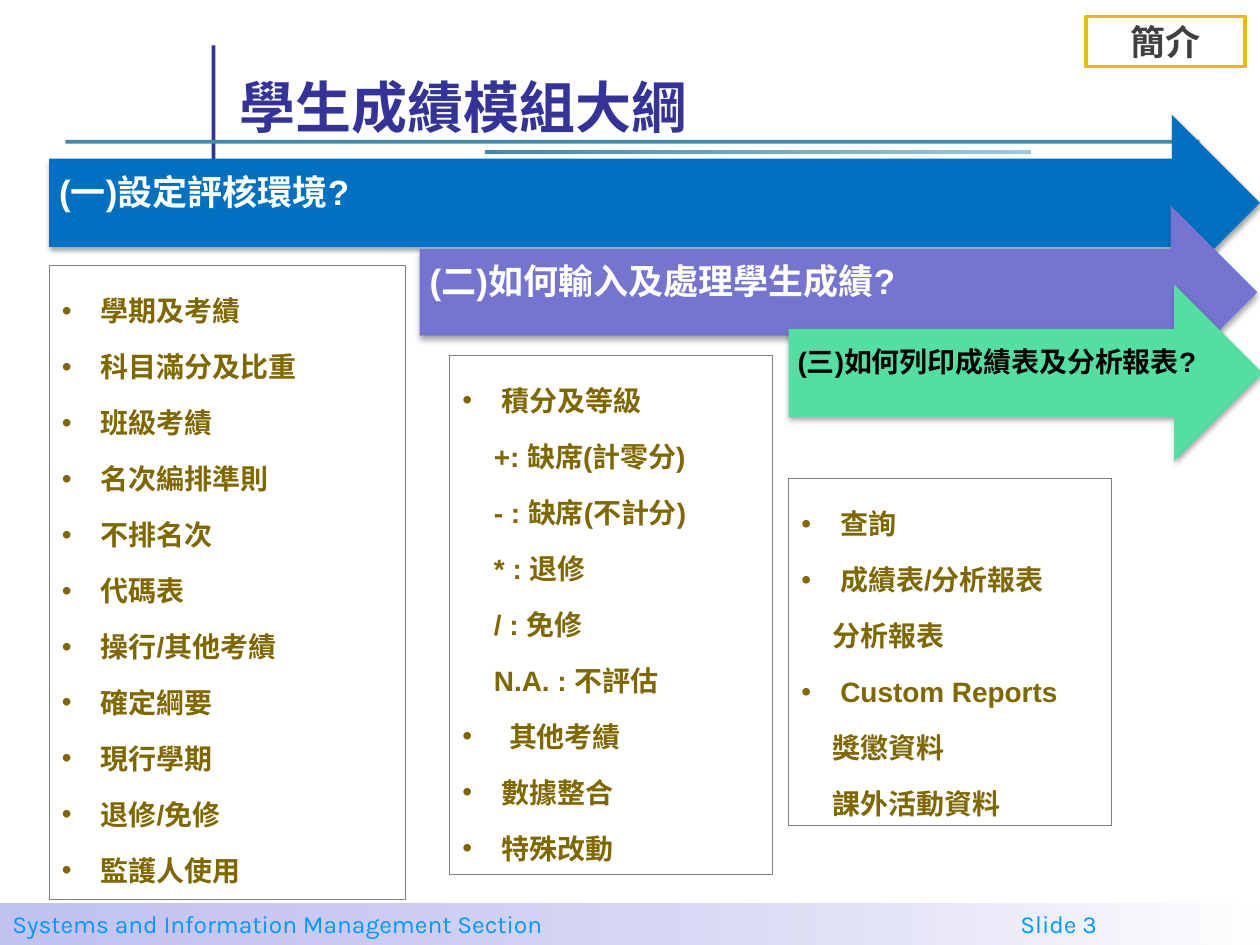
from lxml.etree import SubElement
from pptx import Presentation
from pptx.dml.color import RGBColor
from pptx.enum.shapes import MSO_SHAPE as Shape
from pptx.enum.text import MSO_ANCHOR as Anchor, MSO_AUTO_SIZE as AutoSize, PP_ALIGN as Align
from pptx.oxml.ns import qn
from pptx.util import Inches, Pt

COLORS = {
    "navy": "333399", "teal": "3F8DA5", "mist": "9BCAD9", "indigo": "3333CC",
    "sky": "0099FF", "blue": "0070C0", "violet": "7575D1", "green": "54DFA2",
    "gold": "E7BB01", "olive": "806800", "gray": "808080", "dark": "404040",
    "white": "FFFFFF", "black": "000000",
}

BULLET = {"indent": 0.31, "bullet": True}
DEEP_BULLET = {"indent": 0.37, "bullet": True}
PLAIN = {"indent": 0.25, "bullet": False}

SETUP_ITEMS = [(topic, BULLET) for topic in (
    "學期及考績", "科目滿分及比重", "班級考績", "名次編排準則", "不排名次", "代碼表",
    "操行/其他考績", "確定綱要", "現行學期", "退修/免修", "監護人使用")]
SCORE_ITEMS = [
    ("積分及等級", BULLET), ("+: 缺席(計零分)", PLAIN), ("- : 缺席(不計分)", PLAIN),
    ("* : 退修", PLAIN), ("/ : 免修", PLAIN), ("N.A. : 不評估", PLAIN),
    ("其他考績", DEEP_BULLET), ("數據整合", BULLET), ("特殊改動", BULLET),
]
REPORT_ITEMS = [
    ("查詢", BULLET), ("成績表/分析報表", BULLET), ("分析報表", PLAIN),
    ("Custom Reports", BULLET), ("獎懲資料", PLAIN), ("課外活動資料", PLAIN),
]


def rgb(name):
    return RGBColor.from_string(COLORS[name])


def write(paragraph, text, size=16, color="olive", font="Arial", bold=True,
          align=Align.LEFT, spacing=1.0, before=0, indent=None, bullet=False, tab=None):
    paragraph.alignment = align
    paragraph.line_spacing = spacing
    paragraph.space_before = Pt(before)
    props = paragraph._p.get_or_add_pPr()
    if indent is not None:
        props.set("marL", str(Inches(indent)))
        props.set("indent", str(-Inches(indent) if bullet else 0))
        if bullet:
            SubElement(props, qn("a:buFont"), typeface="Arial")
            SubElement(props, qn("a:buChar"), char="•")
        else:
            SubElement(props, qn("a:buNone"))
    if tab is not None:
        stops = SubElement(props, qn("a:tabLst"))
        SubElement(stops, qn("a:tab"), pos=str(Inches(tab)), algn="l")
    paragraph.font.size = Pt(size)
    run = paragraph.add_run()
    run.text = text
    run.font.size, run.font.name, run.font.bold = Pt(size), font, bold
    run.font.color.rgb = rgb(color)


class OutlineSlide:
    def __init__(self, deck):
        self.slide = deck.slides.add_slide(deck.slide_layouts[4])
        self.bodies = [holder for holder in self.slide.placeholders
                       if holder.placeholder_format.idx > 0]

    def place(self, holder, box):
        holder.left, holder.top, holder.width, holder.height = map(Inches, box)

    def frame(self, shape, anchor, insets=(0.1, 0.05, 0.1, 0.05)):
        frame = shape.text_frame
        frame.word_wrap = True
        frame.auto_size = AutoSize.NONE
        frame.vertical_anchor = anchor
        (frame.margin_left, frame.margin_top,
         frame.margin_right, frame.margin_bottom) = map(Inches, insets)
        return frame

    def title(self, text, box):
        holder = self.slide.shapes.title
        self.place(holder, box)
        write(self.frame(holder, Anchor.BOTTOM).paragraphs[0], text, size=32, color="navy")

    def block(self, box, fill, kind=Shape.RECTANGLE):
        block = self.slide.shapes.add_shape(kind, *map(Inches, box))
        block.shadow.inherit = False
        block.line.fill.background()
        block.fill.solid()
        block.fill.fore_color.rgb = rgb(fill)
        return block

    def gradient(self, box, colors, opacities=(100, 100)):
        band = self.block(box, colors[0])
        band.fill.gradient()
        band.fill.gradient_angle = 0
        for stop, color in zip(band.fill.gradient_stops, colors):
            stop.color.rgb = rgb(color)
        tints = band._element.spPr.iter(qn("a:srgbClr"))
        for tint, opacity in zip(tints, opacities):
            if opacity < 100:
                SubElement(tint, qn("a:alpha"), val=str(opacity * 1000))
        return band

    def footer(self, text, box):
        band = self.gradient(box, ("indigo", "white"), (30, 50))
        write(self.frame(band, Anchor.MIDDLE).paragraphs[0], text,
              size=14, color="sky", font="Karla", bold=False, tab=8)

    def tag(self, text, box):
        tag = self.block(box, "white")
        tag.line.color.rgb = rgb("gold")
        tag.line.width = Pt(2)
        write(self.frame(tag, Anchor.MIDDLE).paragraphs[0], text,
              size=20, color="dark", font="Karla", align=Align.CENTER)

    def arrow(self, text, box, fill, size=20, color="white", inset=0.08):
        left, top, width, height = box
        arrow = self.block(box, fill, Shape.RIGHT_ARROW)
        effects = arrow._element.spPr.find(qn("a:effectLst"))
        shadow = SubElement(effects, qn("a:outerShdw"), blurRad=str(Pt(3.1)),
                            dist=str(Pt(1.8)), dir="5400000", rotWithShape="0")
        tint = SubElement(shadow, qn("a:srgbClr"), val=COLORS["black"])
        SubElement(tint, qn("a:alpha"), val="35000")
        label_box = (left, top + height / 4, width - height / 4, height / 2)
        label = self.slide.shapes.add_textbox(*map(Inches, label_box))
        frame = self.frame(label, Anchor.MIDDLE, (inset, inset, 0.28, 0.22))
        write(frame.paragraphs[0], text, size=size, color=color, spacing=0.9)

    def bullets(self, items, box):
        holder = self.bodies.pop(0)
        self.place(holder, box)
        holder.line.color.rgb = rgb("gray")
        holder.line.width = Pt(0.75)
        frame = self.frame(holder, Anchor.TOP, (0.1, 0.09, 0.1, 0.05))
        for row, (text, style) in enumerate(items):
            paragraph = frame.add_paragraph() if row else frame.paragraphs[0]
            write(paragraph, text, spacing=1.5, before=3.2 if row else 0, **style)

    def drop_unused(self):
        for holder in self.bodies:
            holder._element.getparent().remove(holder._element)


def main():
    deck = Presentation()
    deck.slide_width, deck.slide_height = Inches(10), Inches(7.5)
    outline = OutlineSlide(deck)

    outline.block((1.68, 0.36, 0.03, 1.15), "navy")
    outline.block((0.52, 1.11, 9, 0.03), "teal")
    outline.gradient((3.85, 1.19, 4.33, 0.03), ("teal", "mist"))
    outline.footer("Systems and Information Management Section\tSlide 3", (0, 7.17, 10, 0.33))
    outline.title("學生成績模組大綱", (1.8, 0.39, 4.33, 0.77))

    outline.arrow("(一)設定評核環境?", (0.39, 0.91, 9.61, 1.4), "blue")
    outline.arrow("(二)如何輸入及處理學生成績?", (3.33, 1.63, 6.65, 1.38), "violet")
    outline.arrow("(三)如何列印成績表及分析報表?", (6.26, 2.26, 3.76, 1.4), "green",
                  size=16, color="black", inset=0.07)
    outline.tag("簡介", (8.62, 0.13, 1.26, 0.4))

    outline.bullets(SETUP_ITEMS, (0.39, 2.11, 2.83, 5.03))
    outline.bullets(SCORE_ITEMS, (3.57, 2.82, 2.56, 4.12))
    outline.bullets(REPORT_ITEMS, (6.26, 3.8, 2.56, 2.75))
    outline.drop_unused()
    deck.save("out.pptx")


if __name__ == "__main__":
    main()
